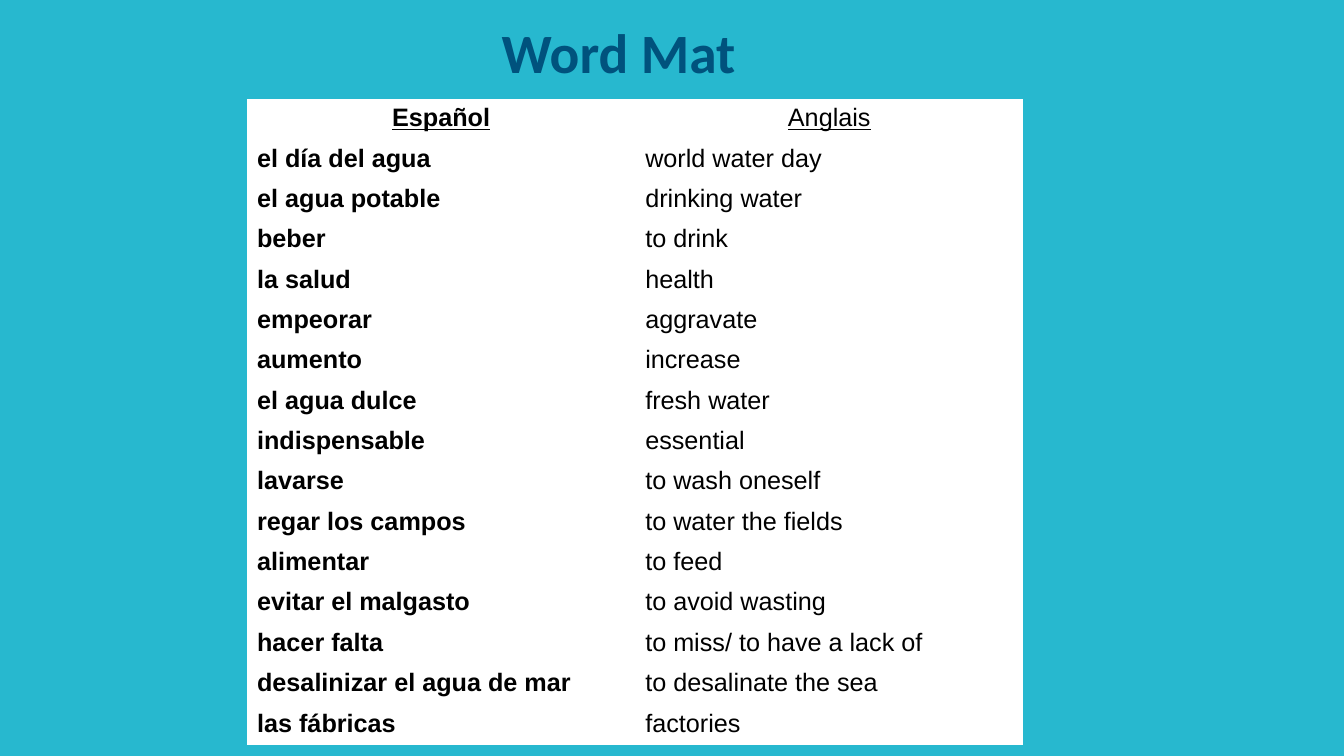
from dataclasses import dataclass

from pptx import Presentation
from pptx.dml.color import RGBColor
from pptx.enum.text import MSO_ANCHOR as Anchor, PP_ALIGN as Align
from pptx.util import Inches, Pt

# Content
TITLE = "Word Mat"
HEADINGS = ("Español", "Anglais")
WORDS = [
    ("el día del agua", "world water day"),
    ("el agua potable", "drinking water"),
    ("beber", "to drink"),
    ("la salud", "health"),
    ("empeorar", "aggravate"),
    ("aumento", "increase"),
    ("el agua dulce", "fresh water"),
    ("indispensable", "essential"),
    ("lavarse", "to wash oneself"),
    ("regar los campos", "to water the fields"),
    ("alimentar", "to feed"),
    ("evitar el malgasto", "to avoid wasting"),
    ("hacer falta", "to miss/ to have a lack of"),
    ("desalinizar el agua de mar", "to desalinate the sea"),
    ("las fábricas", "factories"),
]


@dataclass(frozen=True)
class Theme:
    background: str = "27B8CF"
    title_color: str = "00527D"
    text_color: str = "000000"
    cell_fill: str = "FFFFFF"
    title_font: str = "Calibri"
    table_font: str = "Arial"
    title_size: float = 39.6
    table_size: float = 18


THEME = Theme()
PLAIN_TABLE_STYLE = "{2D5ABB26-0587-4C30-8999-92F81FD0307C}"


def paint(fill, color):
    fill.solid()
    fill.fore_color.rgb = RGBColor.from_string(color)


def write(frame, text, *, font=THEME.table_font, size=THEME.table_size,
          color=THEME.text_color, bold=False, underline=False, align=Align.LEFT):
    paragraph = frame.paragraphs[0]
    paragraph.alignment = align
    run = paragraph.add_run()
    run.text = text
    run.font.name = font
    run.font.size = Pt(size)
    run.font.bold = bold
    run.font.underline = underline
    run.font.color.rgb = RGBColor.from_string(color)


def add_title(slide):
    box = slide.shapes.add_textbox(Inches(3.08), Inches(0.17), Inches(6.11), Inches(0.67))
    frame = box.text_frame
    frame.word_wrap = True
    frame.vertical_anchor = Anchor.MIDDLE
    write(frame, TITLE, font=THEME.title_font, size=THEME.title_size,
          color=THEME.title_color, bold=True, align=Align.CENTER)


def add_word_table(slide):
    rows = [HEADINGS, *WORDS]
    shape = slide.shapes.add_table(len(rows), len(HEADINGS), Inches(2.45), Inches(0.98),
                                   Inches(7.7), Inches(6.29))
    table = shape.table
    table.first_row = table.horz_banding = False
    table._tbl.tblPr[0].text = PLAIN_TABLE_STYLE

    for row_index, words in enumerate(rows):
        heading = row_index == 0
        for column_index, word in enumerate(words):
            cell = table.cell(row_index, column_index)
            paint(cell.fill, THEME.cell_fill)
            write(cell.text_frame, word, bold=column_index == 0, underline=heading,
                  align=Align.CENTER if heading else Align.LEFT)


def main():
    presentation = Presentation()
    presentation.slide_width = Inches(13.33)
    presentation.slide_height = Inches(7.5)
    slide = presentation.slides.add_slide(presentation.slide_layouts[6])
    paint(slide.background.fill, THEME.background)
    add_title(slide)
    add_word_table(slide)
    presentation.save("out.pptx")


if __name__ == "__main__":
    main()
